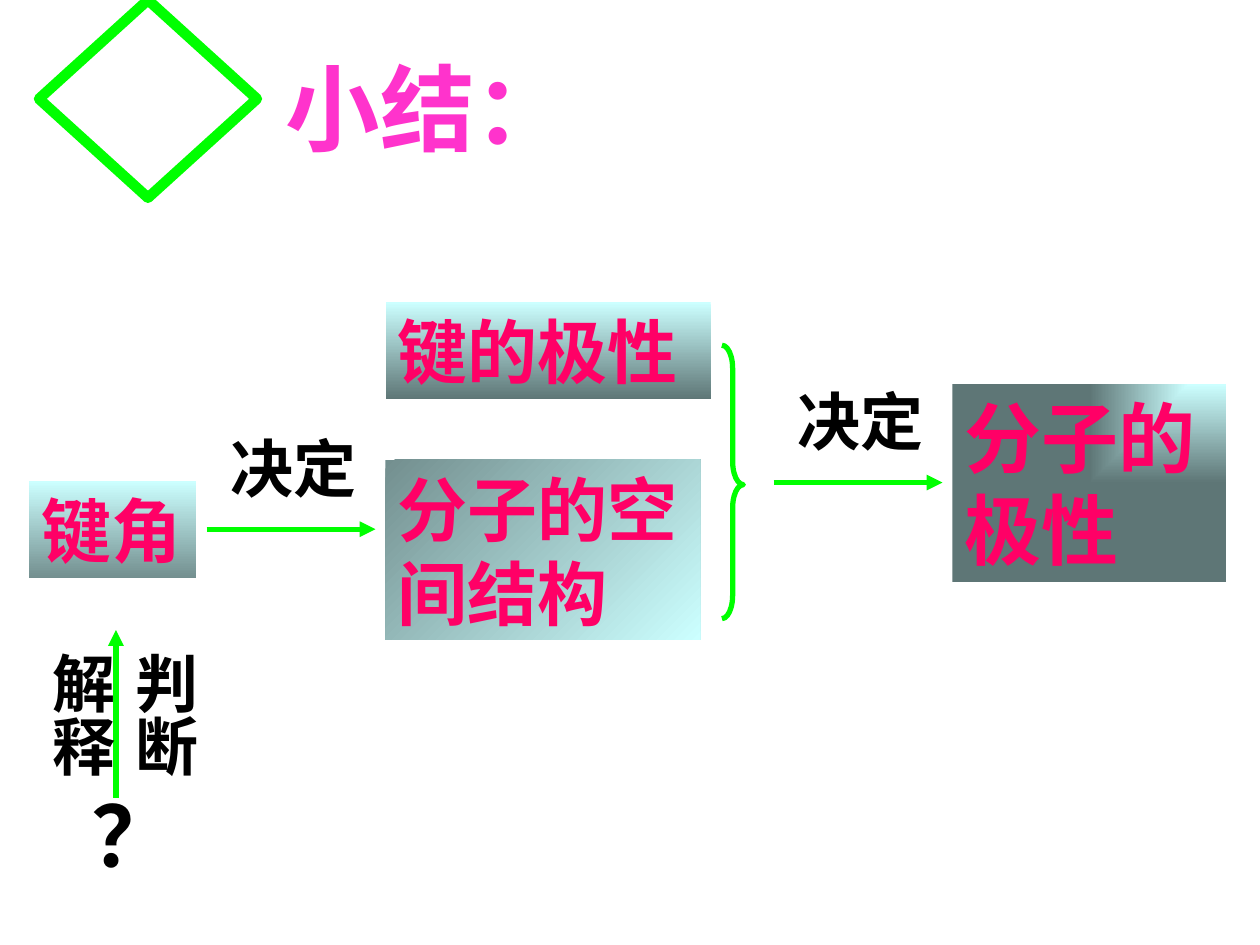
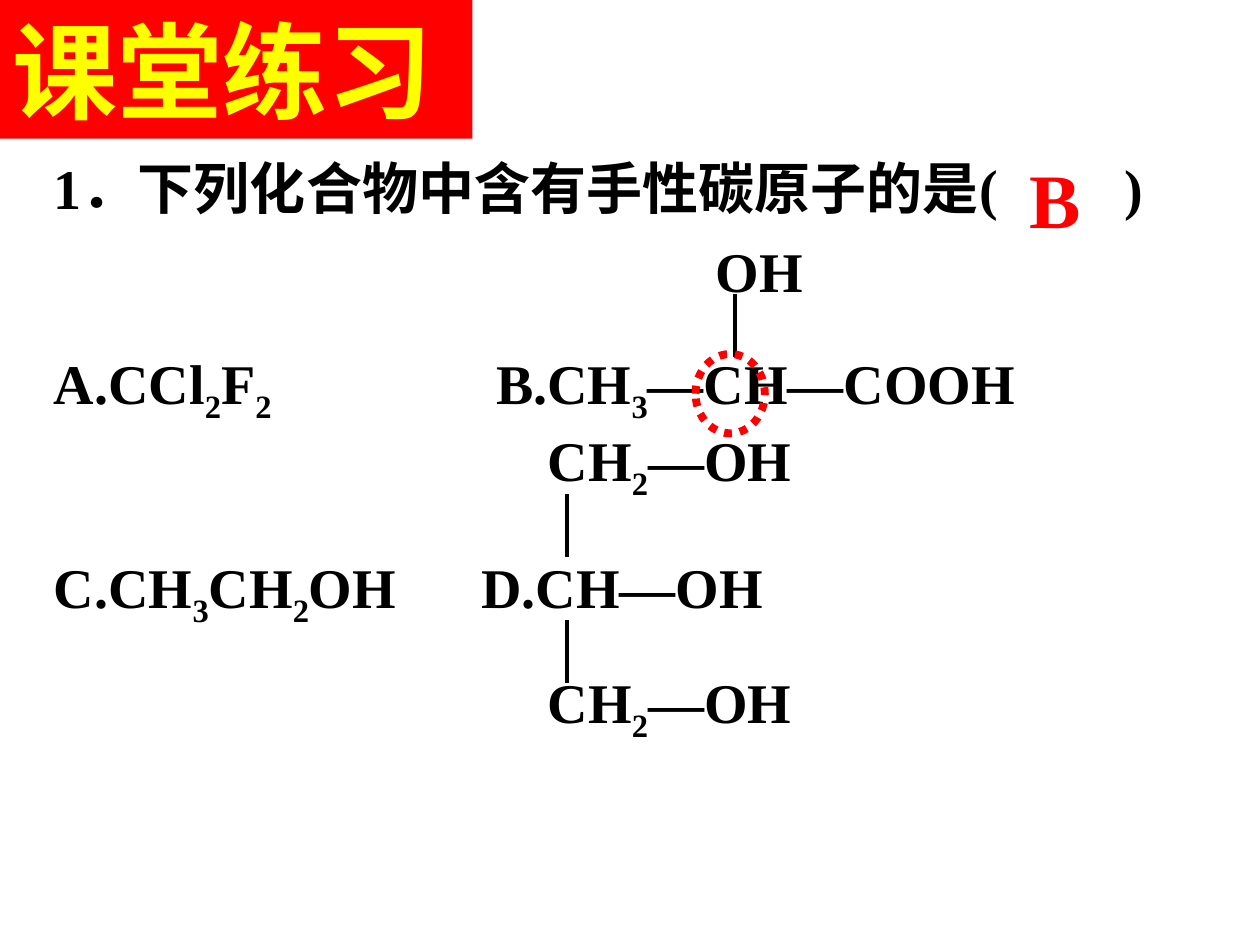
from dataclasses import dataclass
from typing import Any, Optional

from lxml.etree import SubElement
from pptx import Presentation
from pptx.dml.color import RGBColor
from pptx.enum.dml import MSO_LINE
from pptx.enum.lang import MSO_LANGUAGE_ID
from pptx.enum.shapes import MSO_CONNECTOR, MSO_SHAPE
from pptx.enum.text import MSO_ANCHOR, MSO_AUTO_SIZE, PP_ALIGN
from pptx.oxml.ns import qn
from pptx.util import Inches, Pt

# The grid: 100 columns by 75 rows of square cells
COLUMNS, ROWS = 100, 75
CELL = Inches(0.1)


@dataclass(frozen=True)
class Theme:
    black: str = "000000"
    red: str = "FF0000"
    yellow: str = "FFFF00"
    green: str = "00FF00"
    pink: str = "FF33CC"
    crimson: str = "FF0066"
    pale: str = "CCFFFF"
    medium: str = "738F8F"
    dark: str = "5E7676"
    sans: str = "Arial"
    label_font: str = "Roboto"
    serif: str = "Times New Roman"
    banner: int = 60
    title: int = 54
    mark: int = 48
    large: int = 44
    box: int = 40
    label: int = 36
    body: int = 32


THEME = Theme()


@dataclass(frozen=True)
class Area:
    column: float
    row: float
    columns: float
    rows: float

    def lengths(self) -> list[int]:
        return [cells(n) for n in (self.column, self.row, self.columns, self.rows)]


@dataclass(frozen=True)
class Style:
    size: int
    color: str = THEME.black
    font: str = THEME.sans


@dataclass(frozen=True)
class Gradient:
    start: str
    end: str
    angle: Optional[int] = None  # None spreads from the top right corner


@dataclass(frozen=True)
class Box:
    text: str
    area: Area
    style: Style
    fill: Any  # a colour or a Gradient


@dataclass(frozen=True)
class Label:
    text: str
    area: Area
    style: Style
    wrap: bool = True
    vertical: bool = False


@dataclass(frozen=True)
class Line:
    start: tuple[float, float]
    end: tuple[float, float]
    color: str
    width: float
    arrow: bool = False


@dataclass(frozen=True)
class Outline:
    preset: MSO_SHAPE
    area: Area
    color: str
    width: float
    dash: Optional[MSO_LINE] = None
    adjustments: tuple[float, ...] = ()


BOX = Style(THEME.box, THEME.crimson)
RESULT = Style(THEME.large, THEME.crimson)
VERB = Style(THEME.label)
SIDE = Style(THEME.label, font=THEME.label_font)
BODY = Style(THEME.body, font=THEME.serif)


def cells(count: float) -> int:
    return round(count * CELL)


def rgb(color: str) -> RGBColor:
    return RGBColor.from_string(color)


def apply(target: Any, values: dict[str, Any]) -> None:
    for name, value in values.items():
        setattr(target, name, value)


# Text: an underscore puts the next character below the line
def write(paragraph: Any, text: str, style: Style) -> None:
    def add(piece: str, lowered: bool = False) -> None:
        if not piece:
            return
        run = paragraph.add_run()
        run.text = piece
        apply(run.font, {"size": Pt(style.size), "bold": True, "name": style.font,
                         "language_id": MSO_LANGUAGE_ID.SIMPLIFIED_CHINESE})
        run.font.color.rgb = rgb(style.color)
        if lowered:
            run.font._element.set("baseline", "-25000")

    first, *others = text.split("_")
    add(first)
    for part in others:
        add(part[0], lowered=True)
        add(part[1:])


def fill_frame(shape: Any, text: str, style: Style, wrap: bool = True) -> None:
    frame = shape.text_frame
    apply(frame, {"word_wrap": wrap, "auto_size": MSO_AUTO_SIZE.SHAPE_TO_FIT_TEXT,
                  "vertical_anchor": MSO_ANCHOR.TOP})
    paragraph = frame.paragraphs[0]
    paragraph.alignment = PP_ALIGN.LEFT
    write(paragraph, text, style)


def paint(fill: Any, paint_with: Any) -> None:
    if isinstance(paint_with, str):
        fill.solid()
        fill.fore_color.rgb = rgb(paint_with)
        return
    fill.gradient()
    colors = (paint_with.start, paint_with.end)
    for position, (stop, color) in enumerate(zip(fill.gradient_stops, colors)):
        stop.position = position
        stop.color.rgb = rgb(color)
    if paint_with.angle is not None:
        fill.gradient_angle = paint_with.angle


def draw_box(slide: Any, box: Box) -> None:
    shape = slide.shapes.add_shape(MSO_SHAPE.RECTANGLE, *box.area.lengths())
    shape.shadow.inherit = False
    shape.line.fill.background()
    paint(shape.fill, box.fill)
    if isinstance(box.fill, Gradient) and box.fill.angle is None:
        gradient = shape._element.spPr.find(qn("a:gradFill"))
        gradient.remove(gradient.find(qn("a:lin")))
        corner = SubElement(gradient, qn("a:path"), {"path": "rect"})
        SubElement(corner, qn("a:fillToRect"), {"l": "100000", "b": "100000"})
    fill_frame(shape, box.text, box.style)


def draw_label(slide: Any, label: Label) -> None:
    shape = slide.shapes.add_textbox(*label.area.lengths())
    fill_frame(shape, label.text, label.style, label.wrap)
    if label.vertical:
        shape._element.txBody.find(qn("a:bodyPr")).set("vert", "eaVert")


def draw_line(slide: Any, line: Line) -> None:
    ends = [cells(n) for n in (*line.start, *line.end)]
    connector = slide.shapes.add_connector(MSO_CONNECTOR.STRAIGHT, *ends)
    connector.line.color.rgb = rgb(line.color)
    connector.line.width = Pt(line.width)
    if line.arrow:
        SubElement(connector.line._get_or_add_ln(), qn("a:tailEnd"), {"type": "triangle"})
    SubElement(connector._element.spPr, qn("a:effectLst"))


def draw_outline(slide: Any, outline: Outline) -> None:
    shape = slide.shapes.add_shape(outline.preset, *outline.area.lengths())
    shape.shadow.inherit = False
    shape.fill.background()
    shape.line.color.rgb = rgb(outline.color)
    apply(shape.line, {"width": Pt(outline.width), "dash_style": outline.dash})
    for index, value in enumerate(outline.adjustments):
        shape.adjustments[index] = value


PAINTERS = {Box: draw_box, Label: draw_label, Line: draw_line, Outline: draw_outline}


def draw(slide: Any, items: list[Any]) -> None:
    for item in items:
        PAINTERS[type(item)](slide, item)


# Slide 1: what decides the polarity of a molecule
def arrow(start: tuple[float, float], end: tuple[float, float]) -> Line:
    return Line(start, end, THEME.green, 3, arrow=True)


def decides(column: float, row: float) -> list[Any]:
    return [arrow((column, row), (column + 13.4, row)),
            Label("决定", Area(column + 0.9, row - 8.4, 15.8, 7), VERB)]


SUMMARY = [
    Box("分子的极性", Area(75.6, 30.5, 21.7, 15.7), RESULT, Gradient(THEME.pale, THEME.dark)),
    Box("分子的空间结构", Area(30.6, 36.5, 25, 14.3), BOX,
        Gradient(THEME.medium, THEME.pale, 315)),
    Box("键角", Area(2.3, 38.2, 13.3, 7.7), BOX, Gradient(THEME.pale, THEME.medium, 270)),
    Box("键的极性", Area(30.6, 24, 25.8, 7.7), BOX, Gradient(THEME.pale, THEME.dark, 270)),
    *decides(16.4, 42),
    Outline(MSO_SHAPE.RIGHT_BRACE, Area(57.3, 27.4, 1.7, 21.7), THEME.green, 3,
            adjustments=(1.08, 0.51)),
    *decides(61.4, 38.3),
    Outline(MSO_SHAPE.DIAMOND, Area(3.1, 0, 17.3, 15.7), THEME.green, 6),
    Label("小结：", Area(21.7, 3.5, 25.2, 10), Style(THEME.title, THEME.pink)),
    arrow((9.2, 63.3), (9.2, 50)),
    Label("？", Area(6.3, 61.7, 8.7, 9), Style(THEME.mark, font=THEME.label_font), wrap=False),
    *(Label(text, Area(column, 50.8, 8, 11.2), SIDE, wrap=False, vertical=True)
      for text, column in (("判断", 8.6), ("解释", 2))),
]

# Slide 2: exercise; each row has its text and the column of its tab stop
QUESTION_AREA = Area(3.3, 11.7, 90, 46.4)
QUESTION_GAP = 73
QUESTION_ROWS = [
    ("1．下列化合物中含有手性碳原子的是(\t)", 85),
    ("A.CCl_2F_2\tB.CH_3—CH—COOH", 35.1),
    ("C.CH_3CH_2OH\tD.CH—OH", 33.9),
]


def bond(column: float, row: float) -> Line:
    return Line((column, row), (column, row + 5), THEME.black, 2.25)


EXERCISE = [
    bond(58.3, 23.3), bond(45, 39.2), bond(45, 49.2),
    *(Label(text, Area(column, row, 24.2, 6.3), BODY) for text, column, row in (
        ("CH_2—OH", 42.5, 33.3), ("CH_2—OH", 42.5, 52.5), ("OH", 55.8, 18.3))),
    Outline(MSO_SHAPE.OVAL, Area(55.2, 28.1, 5.5, 6.3), THEME.red, 4.5, MSO_LINE.ROUND_DOT),
    Label("B", Area(80.7, 11.5, 7.1, 8.3), Style(THEME.large, THEME.red, THEME.serif)),
    Box("课堂练习", Area(0, 0, 37.5, 11), Style(THEME.banner, THEME.yellow), THEME.red),
]


def draw_question(slide: Any) -> None:
    frame = slide.shapes.add_textbox(*QUESTION_AREA.lengths()).text_frame
    frame.word_wrap = True
    for index, (text, stop) in enumerate(QUESTION_ROWS):
        paragraph = frame.add_paragraph() if index else frame.paragraphs[0]
        if index:
            paragraph.space_before = Pt(QUESTION_GAP)
        stops = SubElement(paragraph._p.get_or_add_pPr(), qn("a:tabLst"))
        SubElement(stops, qn("a:tab"), {"pos": str(cells(stop)), "algn": "l"})
        write(paragraph, text, BODY)


def main() -> None:
    presentation = Presentation()
    presentation.slide_width = cells(COLUMNS)
    presentation.slide_height = cells(ROWS)
    blank = presentation.slide_layouts[6]
    draw(presentation.slides.add_slide(blank), SUMMARY)
    exercise = presentation.slides.add_slide(blank)
    draw_question(exercise)
    draw(exercise, EXERCISE)
    presentation.save("out.pptx")


if __name__ == "__main__":
    main()
